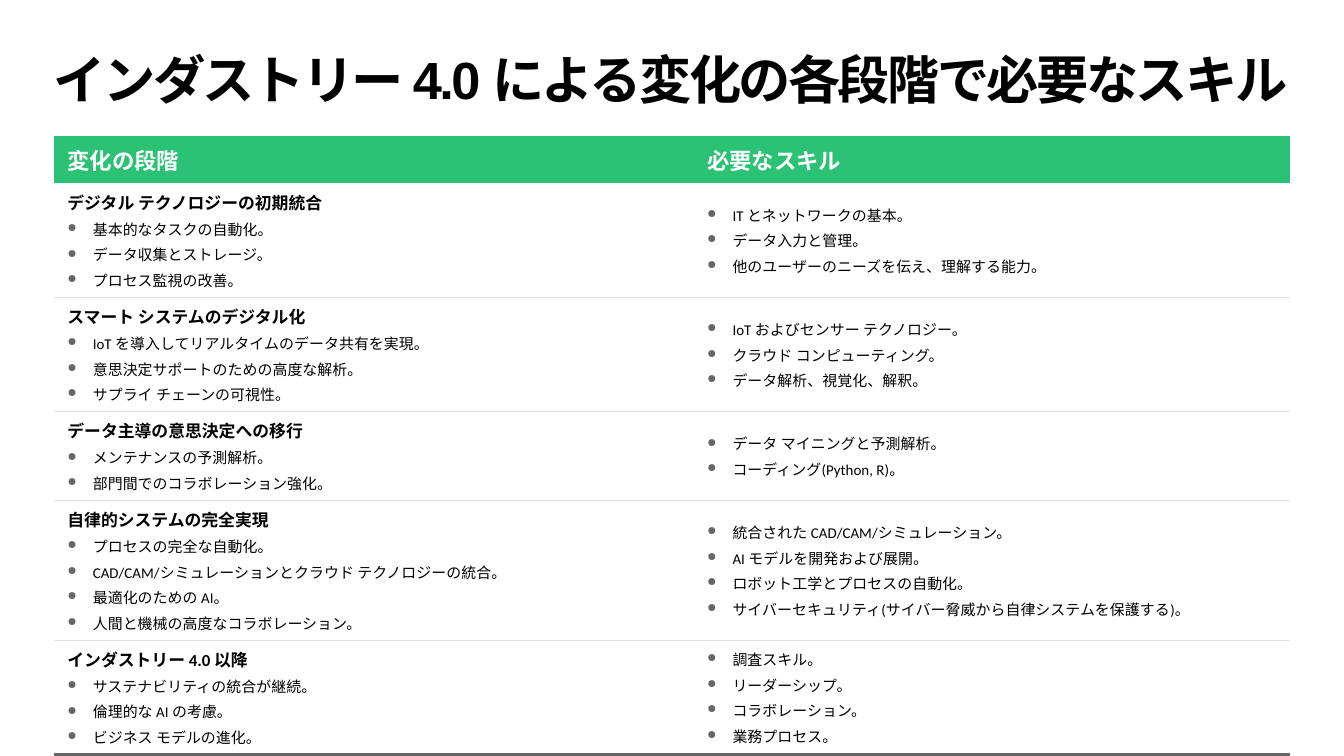
from lxml import etree
from pptx import Presentation
from pptx.dml.color import RGBColor
from pptx.enum import text
from pptx.oxml import ns
from pptx.util import Cm, Pt

BLACK = RGBColor(0x00, 0x00, 0x00)
WHITE = RGBColor(0xFF, 0xFF, 0xFF)
GREEN = RGBColor(0x2B, 0xC2, 0x75)
RULE = RGBColor(0xE0, 0xE0, 0xE0)
GRAY = RGBColor(0x66, 0x66, 0x66)

TITLE = "インダストリー 4.0 による変化の各段階で必要なスキル"
HEADERS = ["変化の段階", "必要なスキル"]
STAGES = [
    ("デジタル テクノロジーの初期統合",
     ["基本的なタスクの自動化。", "データ収集とストレージ。", "プロセス監視の改善。"],
     ["IT とネットワークの基本。", "データ入力と管理。",
      "他のユーザーのニーズを伝え、理解する能力。"]),
    ("スマート システムのデジタル化",
     ["IoT を導入してリアルタイムのデータ共有を実現。",
      "意思決定サポートのための高度な解析。", "サプライ チェーンの可視性。"],
     ["IoT およびセンサー テクノロジー。", "クラウド コンピューティング。",
      "データ解析、視覚化、解釈。"]),
    ("データ主導の意思決定への移行",
     ["メンテナンスの予測解析。", "部門間でのコラボレーション強化。"],
     ["データ マイニングと予測解析。", "コーディング(Python, R)。"]),
    ("自律的システムの完全実現",
     ["プロセスの完全な自動化。",
      "CAD/CAM/シミュレーションとクラウド テクノロジーの統合。",
      "最適化のための AI。", "人間と機械の高度なコラボレーション。"],
     ["統合された CAD/CAM/シミュレーション。", "AI モデルを開発および展開。",
      "ロボット工学とプロセスの自動化。",
      "サイバーセキュリティ(サイバー脅威から自律システムを保護する)。"]),
    ("インダストリー 4.0 以降",
     ["サステナビリティの統合が継続。", "倫理的な AI の考慮。", "ビジネス モデルの進化。"],
     ["調査スキル。", "リーダーシップ。", "コラボレーション。", "業務プロセス。"]),
]

TITLE_FONT = {"name": "Arial", "size": Pt(28), "bold": True}
HEADER_FONT = {"name": "Calibri", "size": Pt(12), "bold": True}
STAGE_FONT = {"name": "Calibri", "size": Pt(9), "bold": True}
ITEM_FONT = {"name": "Calibri", "size": Pt(8), "bold": False}

COLUMN_WIDTHS = [Cm(12.09), Cm(11.27)]
HEADER_HEIGHT = Cm(0.89)
THIN_RULE = (RULE, Pt(0.5))
CLOSING_RULE = (GRAY, Pt(2.25))


def add_run(p, content, font, color):
    r = p.add_run()
    r.text = content
    for name, value in font.items():
        setattr(r.font, name, value)
    r.font.color.rgb = color
    return r


def add_child(parent, tag, **attributes):
    return etree.SubElement(parent, ns.qn(tag), attributes)


def add_bullet(p):
    pPr = p._p.get_or_add_pPr()
    pPr.set("marL", str(Cm(0.48)))
    pPr.set("indent", str(-Cm(0.48)))
    add_child(add_child(pPr, "a:buClr"), "a:srgbClr", val=str(GRAY))
    add_child(pPr, "a:buSzPct", val="80000")
    add_child(pPr, "a:buChar", char="●")


def format_cell(cell, fill, top=None, bottom=None):
    """Fill the cell and draw the borders that are given as (color, width)."""
    cell.vertical_anchor = text.MSO_ANCHOR.MIDDLE
    tcPr = cell._tc.get_or_add_tcPr()
    borders = {"a:lnL": None, "a:lnR": None, "a:lnT": top, "a:lnB": bottom}
    for side, border in borders.items():
        ln = add_child(tcPr, side)
        if border:
            color, width = border
            ln.set("w", str(width))
            add_child(add_child(ln, "a:solidFill"), "a:srgbClr", val=str(color))
        else:
            add_child(ln, "a:noFill")
    cell.fill.solid()
    cell.fill.fore_color.rgb = fill


def write_cell(cell, items, heading=None):
    tf = cell.text_frame
    lines = ([heading] if heading else []) + items
    for i, line in enumerate(lines):
        p = tf.add_paragraph() if i else tf.paragraphs[0]
        if line == heading:
            add_run(p, line, STAGE_FONT, BLACK)
        else:
            add_bullet(p)
            add_run(p, line, ITEM_FONT, BLACK)
        if i:
            p.space_before = Pt(2)


def add_title(s):
    tf = s.shapes.add_textbox(Cm(1.02), Cm(1.02), Cm(24.03), Cm(1.12)).text_frame
    tf.word_wrap = True
    for side in ("left", "right", "top", "bottom"):
        setattr(tf, f"margin_{side}", 0)
    p = tf.paragraphs[0]
    p.line_spacing = 0.9
    r = add_run(p, TITLE, TITLE_FONT, BLACK)
    r.font._element.set("spc", "-140")


def add_skills_table(s):
    table = s.shapes.add_table(
        len(STAGES) + 1, len(HEADERS), Cm(1.02), Cm(2.57),
        sum(COLUMN_WIDTHS), Cm(11.69)).table
    table.first_row = table.horz_banding = False
    for column, width in zip(table.columns, COLUMN_WIDTHS):
        column.width = width

    table.rows[0].height = HEADER_HEIGHT
    for cell, header in zip(table.rows[0].cells, HEADERS):
        format_cell(cell, GREEN)
        add_run(cell.text_frame.paragraphs[0], header, HEADER_FONT, WHITE)

    for number, (stage, changes, skills) in enumerate(STAGES, 1):
        row = table.rows[number]
        row.height = Cm(0.24 + 0.48 * (len(changes) + 1))
        top = THIN_RULE if number > 1 else None
        bottom = CLOSING_RULE if number == len(STAGES) else THIN_RULE
        for cell in row.cells:
            format_cell(cell, WHITE, top, bottom)
        write_cell(row.cells[0], changes, stage)
        write_cell(row.cells[1], skills)


def main():
    prs = Presentation()
    prs.slide_width, prs.slide_height = Cm(25.4), Cm(14.29)
    s = prs.slides.add_slide(prs.slide_layouts[6])
    add_title(s)
    add_skills_table(s)
    prs.save("out.pptx")


if __name__ == "__main__":
    main()
